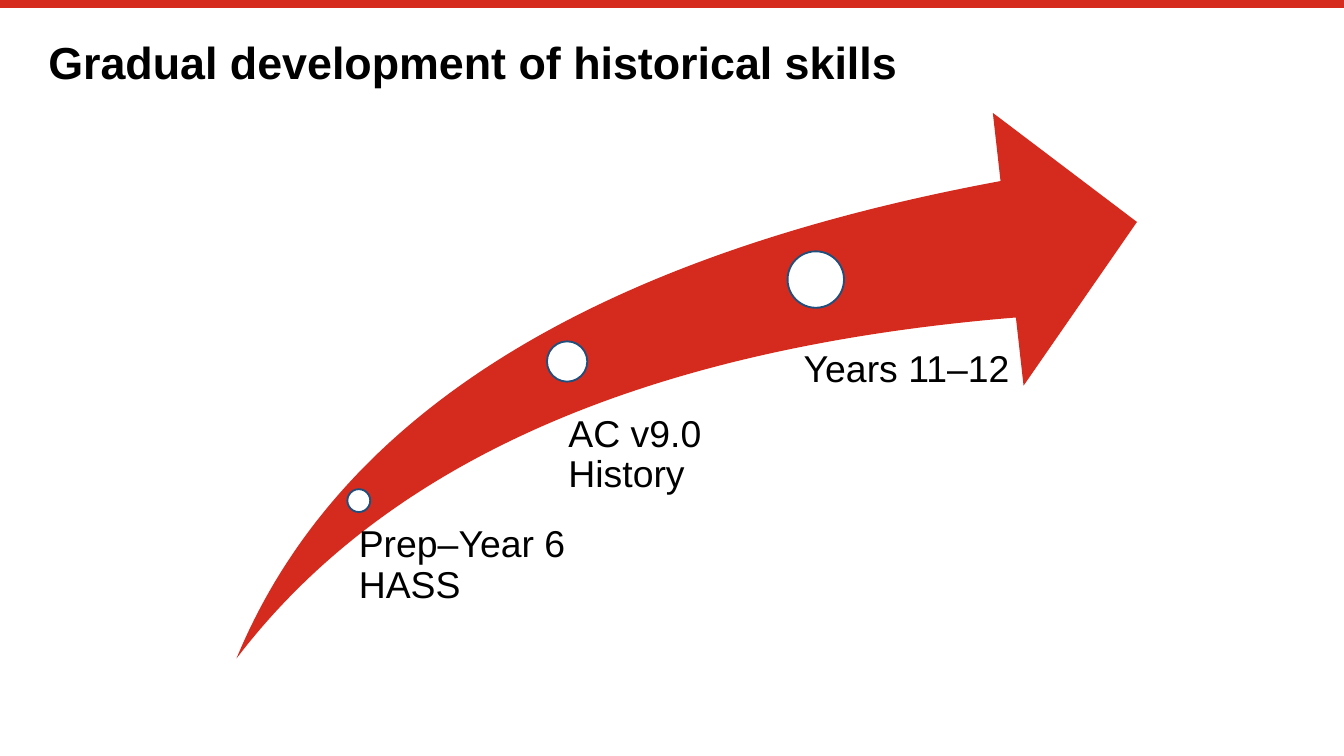
from collections import namedtuple

from pptx import Presentation
from pptx.dml.color import RGBColor
from pptx.enum.shapes import MSO_CONNECTOR, MSO_SHAPE
from pptx.enum.text import MSO_ANCHOR
from pptx.oxml.ns import qn
from pptx.util import Inches, Pt
from lxml.etree import SubElement

COLORS = {"red": "D52B1E", "blue": "1E4F7D", "white": "FFFFFF", "black": "000000"}
TITLE_FORMAT = {"name": "Arial", "size": Pt(24), "bold": True}
LABEL_FORMAT = {"name": "Arial", "size": Pt(20), "bold": False}

# The slide is a square grid, 100 columns wide
SLIDE_WIDTH = Inches(10)
SLIDE_HEIGHT = SLIDE_WIDTH * 9 // 16
UNIT = SLIDE_WIDTH // 100

Box = namedtuple("Box", "left top width height")
Stage = namedtuple("Stage", "text center_x center_y diameter label indent")

# Positions are grid steps from the top left corner of the arrow
STAGES = [
    Stage("Prep–Year 6 HASS", 9.1, 28.85, 1.7, Box(8.2, 30.7, 20.3, 6.1), 0.9),
    Stage("AC v9.0 History", 24.6, 18.5, 3, Box(23.1, 22.5, 15.6, 6.1), 1.6),
    Stage("Years 11–12", 43.1, 12.4, 4.2, Box(40, 17.7, 18.8, 3), 2.2),
]


def grid(steps):
    return round(steps * UNIT)


def color(name):
    return RGBColor.from_string(COLORS[name])


def add_text(slide, box, text, font_format, indent=0):
    shape = slide.shapes.add_textbox(*map(grid, box))
    frame_format = {
        "word_wrap": True, "vertical_anchor": MSO_ANCHOR.TOP,
        "margin_left": grid(indent), "margin_right": 0,
        "margin_top": 0, "margin_bottom": 0,
    }
    for name, value in frame_format.items():
        setattr(shape.text_frame, name, value)
    paragraph = shape.text_frame.paragraphs[0]
    paragraph.line_spacing = 0.9
    run = paragraph.add_run()
    run.text = text
    for name, value in font_format.items():
        setattr(run.font, name, value)
    run.font.color.rgb = color("black")


def add_filled_shape(slide, preset, box, fill, line=None):
    shape = slide.shapes.add_shape(preset, *map(grid, box))
    shape.shadow.inherit = False
    shape.fill.solid()
    shape.fill.fore_color.rgb = color(fill)
    if line:
        shape.line.color.rgb = color(line)
        shape.line.width = Pt(1)
    else:
        shape.line.fill.background()
    return shape


def add_header(slide, box):
    # Band along the top edge
    band_y = grid(box.top + 0.3)
    band = slide.shapes.add_connector(
        MSO_CONNECTOR.STRAIGHT, grid(box.left), band_y,
        grid(box.left + box.width), band_y)
    band.line.color.rgb = color("red")
    band.line.width = Pt(4.2)
    SubElement(band._element.spPr, qn("a:effectLst"))

    # Title
    title_box = Box(box.left + 3.6, box.top + 3, box.width - 7.1, 3.9)
    add_text(slide, title_box, "Gradual development of historical skills", TITLE_FORMAT)


def add_growth_arrow(slide, box):
    # Rising arrow
    arrow = add_filled_shape(slide, MSO_SHAPE.SWOOSH_ARROW, box, "red")
    arrow.adjustments[0] = 0.25
    arrow.adjustments[1] = 0.25

    # Growing markers, each with its label
    for stage in STAGES:
        radius = stage.diameter / 2
        marker = Box(box.left + stage.center_x - radius,
                     box.top + stage.center_y - radius,
                     stage.diameter, stage.diameter)
        add_filled_shape(slide, MSO_SHAPE.OVAL, marker, "white", "blue")
        label = stage.label._replace(left=box.left + stage.label.left,
                                     top=box.top + stage.label.top)
        add_text(slide, label, stage.text, LABEL_FORMAT, stage.indent)


def main():
    presentation = Presentation()
    presentation.slide_width = SLIDE_WIDTH
    presentation.slide_height = SLIDE_HEIGHT
    slide = presentation.slides.add_slide(presentation.slide_layouts[6])
    slide.background.fill.solid()
    slide.background.fill.fore_color.rgb = color("white")
    add_header(slide, Box(0, 0, 100, 8))
    add_growth_arrow(slide, Box(17.6, 8.4, 67, 40.6))
    presentation.save("out.pptx")


if __name__ == "__main__":
    main()
